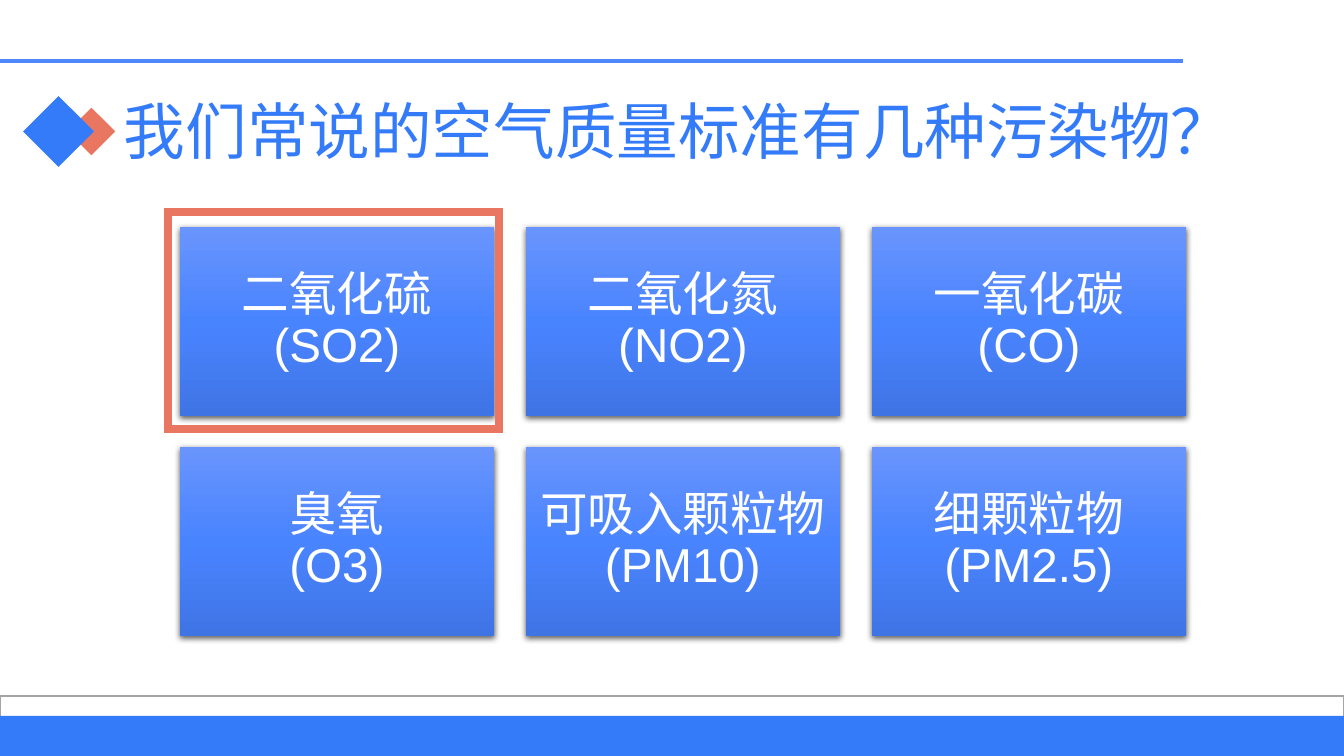
from lxml.etree import SubElement
from pptx import Presentation
from pptx.dml.color import RGBColor
from pptx.enum.shapes import MSO_CONNECTOR, MSO_SHAPE
from pptx.enum.text import MSO_ANCHOR, PP_ALIGN
from pptx.oxml.ns import qn
from pptx.util import Emu, Pt

COLORS = {
    "blue": "347BF9",
    "rule": "4F86F9",
    "coral": "E87660",
    "white": "FFFFFF",
    "grey": "A5A5A5",
    "shadow": "000000",
}
CARD_STOPS = ((0, "6994FC"), (50, "4984FF"), (100, "3F74E5"))


def px(length):
    return Emu(round(length * 914400 / 100.8))


def color(name):
    return RGBColor.from_string(COLORS[name])


class SlideBuilder:
    def __init__(self, page):
        self.page = page

    def shape(self, kind, left, top, width, height, fill=None, line=None, weight=1):
        shape = self.page.shapes.add_shape(kind, px(left), px(top), px(width), px(height))
        shape.shadow.inherit = False
        if fill:
            shape.fill.solid()
            shape.fill.fore_color.rgb = color(fill)
        else:
            shape.fill.background()
        if line:
            shape.line.color.rgb = color(line)
            shape.line.width = Pt(weight)
            outline = shape._element.spPr.find(qn("a:ln"))
            SubElement(outline, qn("a:miter"), lim="800000")
        else:
            shape.line.fill.background()
        return shape

    def rule(self, left, top, right, name, weight):
        line = self.page.shapes.add_connector(
            MSO_CONNECTOR.STRAIGHT, px(left), px(top), px(right), px(top))
        line.line.color.rgb = color(name)
        line.line.width = Pt(weight)
        SubElement(line._element.spPr, qn("a:effectLst"))

    def set_text(self, frame, text, size, font, name, align):
        frame.word_wrap = True
        frame.vertical_anchor = MSO_ANCHOR.MIDDLE
        para = frame.paragraphs[0]
        para.alignment = align
        para.line_spacing = 0.9
        for index, part in enumerate(text.split("\n")):
            if index:
                para.add_line_break()
            span = para.add_run()
            span.text = part
            span.font.size = Pt(size)
            span.font.name = font
            span.font.color.rgb = color(name)

    def title(self, left, top, width, height, text):
        box = self.page.shapes.add_textbox(px(left), px(top), px(width), px(height))
        self.set_text(box.text_frame, text, 44, "Montserrat", "blue", PP_ALIGN.LEFT)

    def card(self, left, top, width, height, text):
        card = self.shape(MSO_SHAPE.RECTANGLE, left, top, width, height)
        # Vertical three-stop gradient
        card.fill.gradient()
        card.fill.gradient_angle = 270
        properties = card._element.spPr
        stops = properties.find(".//" + qn("a:gsLst"))
        for stop in list(stops):
            stops.remove(stop)
        for position, value in CARD_STOPS:
            stop = SubElement(stops, qn("a:gs"), pos=str(position * 1000))
            SubElement(stop, qn("a:srgbClr"), val=value)
        # Soft shadow below the card
        shadow = SubElement(
            properties.find(qn("a:effectLst")), qn("a:outerShdw"),
            blurRad=str(int(Pt(4.5))), dist=str(int(Pt(1.5))), dir="5400000",
            algn="ctr", rotWithShape="0")
        tint = SubElement(shadow, qn("a:srgbClr"), val=COLORS["shadow"])
        SubElement(tint, qn("a:alpha"), val="63000")
        frame = card.text_frame
        frame.margin_left = frame.margin_right = px(13)
        frame.margin_top = frame.margin_bottom = px(14)
        self.set_text(frame, text, 34, "Arial", "white", PP_ALIGN.CENTER)


def main():
    deck = Presentation()
    deck.slide_width, deck.slide_height = px(1344), px(756)
    builder = SlideBuilder(deck.slides.add_slide(deck.slide_layouts[6]))

    # Footer bands and top rule
    builder.shape(MSO_SHAPE.RECTANGLE, 0, 696, 1344, 60, "white", "grey", 1.5)
    builder.shape(MSO_SHAPE.RECTANGLE, 0, 716, 1344, 40, "blue")
    builder.rule(0, 61, 1183, "rule", 2.25)

    # Title with its diamonds
    builder.shape(MSO_SHAPE.DIAMOND, 66, 106, 51, 51, "coral", "white", 1.5)
    builder.shape(MSO_SHAPE.DIAMOND, 24, 97, 69, 69, "blue", "blue", 1)
    builder.title(114, 82, 1137, 105, "我们常说的空气质量标准有几种污染物？")

    # Pollutant cards, three to a row
    pollutants = (
        "二氧化硫(SO2)", "二氧化氮(NO2)", "一氧化碳(CO)",
        "臭氧\n(O3)", "可吸入颗粒物\n(PM10)", "细颗粒物(PM2.5)",
    )
    for index, pollutant in enumerate(pollutants):
        row, column = divmod(index, 3)
        builder.card(180 + 346 * column, 227 + 220 * row, 314, 189, pollutant)

    # Frame around the first card
    builder.shape(MSO_SHAPE.RECTANGLE, 168, 212, 331, 217, line="coral", weight=6)

    deck.save("out.pptx")


if __name__ == "__main__":
    main()
